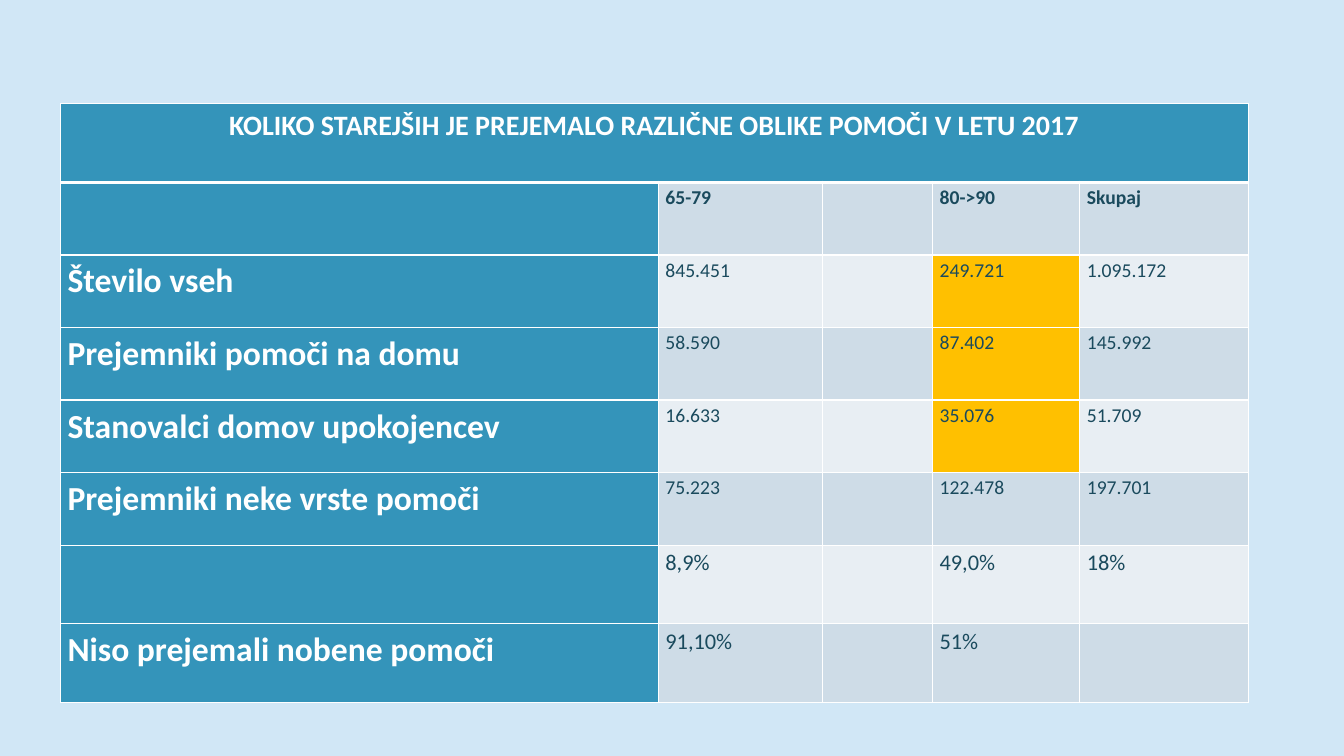
from lxml import etree
from pptx import Presentation
from pptx.dml.color import RGBColor
from pptx.enum.text import PP_ALIGN
from pptx.oxml.ns import qn
from pptx.util import Inches, Pt

CENTER, LEFT = PP_ALIGN.CENTER, PP_ALIGN.LEFT
SKY = RGBColor(0xD1, 0xE7, 0xF6)
BLUE = RGBColor(0x34, 0x94, 0xBA)
DARK = RGBColor(0x1A, 0x4A, 0x5D)
GREY = RGBColor(0xCE, 0xDC, 0xE7)
PALE = RGBColor(0xE8, 0xEE, 0xF3)
GOLD = RGBColor(0xFF, 0xC0, 0x00)
WHITE = RGBColor(0xFF, 0xFF, 0xFF)

WIDTHS = [5.93, 1.63, 1.09, 1.46, 1.67]
HEIGHTS = [0.78] + [0.72] * 5 + [0.78] * 2
ROWS = [
    ["KOLIKO STAREJŠIH JE PREJEMALO RAZLIČNE OBLIKE POMOČI V LETU 2017", "", "", "", ""],
    ["", "65-79", "", "80->90", "Skupaj"],
    ["Število vseh", "845.451", "", "249.721", "1.095.172"],
    ["Prejemniki pomoči na domu", "58.590", "", "87.402", "145.992"],
    ["Stanovalci domov upokojencev", "16.633", "", "35.076", "51.709"],
    ["Prejemniki neke vrste pomoči", "75.223", "", "122.478", "197.701"],
    ["", "8,9%", "", "49,0%", "18%"],
    ["Niso prejemali nobene pomoči", "91,10%", "", "51%", ""],
]
GOLD_ROWS, GOLD_COL = (2, 3, 4), 3
PERCENT_ROW = 6
MARGINS = {
    "margin_left": Inches(0.07), "margin_right": Inches(0.07),
    "margin_top": 0, "margin_bottom": 0,
}


def set_all(target, values):
    for name, value in values.items():
        setattr(target, name, value)


def pick_fill(row, col):
    if row == 0 or col == 0:
        return BLUE
    if row in GOLD_ROWS and col == GOLD_COL:
        return GOLD
    return GREY if row % 2 else PALE


def pick_font(row, col):
    """Return size, weight and colour for the cell's place in the table."""
    if row == 0:
        return 20, True, WHITE
    if col == 0:
        return 24, True, WHITE
    return 16 if row >= PERCENT_ROW else 14, row == 1, DARK


def add_edges(cell, row):
    """Draw white borders, thick below the heading row."""
    props = cell._tc.get_or_add_tcPr()
    thick = {"lnT": row == 1, "lnB": row == 0}
    for side in ("lnL", "lnR", "lnT", "lnB"):
        width = Pt(3 if thick.get(side) else 1)
        line = etree.SubElement(props, qn(f"a:{side}"), w=str(width))
        fill = etree.SubElement(line, qn("a:solidFill"))
        etree.SubElement(fill, qn("a:srgbClr"), val=str(WHITE))


def fill_cell(cell, text, row, col):
    add_edges(cell, row)
    cell.fill.solid()
    cell.fill.fore_color.rgb = pick_fill(row, col)
    if not text:
        return
    set_all(cell, MARGINS)
    para = cell.text_frame.paragraphs[0]
    set_all(para, {"line_spacing": 1.15, "alignment": LEFT if row else CENTER})
    run = para.add_run()
    run.text = text
    size, bold, color = pick_font(row, col)
    set_all(run.font, {"name": "Calibri", "size": Pt(size), "bold": bold})
    run.font.color.rgb = color


def add_table(slide):
    frame = slide.shapes.add_table(
        len(ROWS), len(WIDTHS), Inches(0.6), Inches(1.03),
        Inches(sum(WIDTHS)), Inches(sum(HEIGHTS)))
    table = frame.table
    for column, width in zip(table.columns, WIDTHS):
        column.width = Inches(width)
    for line, height in zip(table.rows, HEIGHTS):
        line.height = Inches(height)
    for row, texts in enumerate(ROWS):
        for col, text in enumerate(texts):
            fill_cell(table.cell(row, col), text, row, col)
    table.cell(0, 0).merge(table.cell(0, len(WIDTHS) - 1))


def main():
    deck = Presentation()
    set_all(deck, {"slide_width": Inches(13.33), "slide_height": Inches(7.5)})
    slide = deck.slides.add_slide(deck.slide_layouts[6])
    slide.background.fill.solid()
    slide.background.fill.fore_color.rgb = SKY
    add_table(slide)
    deck.save("out.pptx")


if __name__ == "__main__":
    main()
